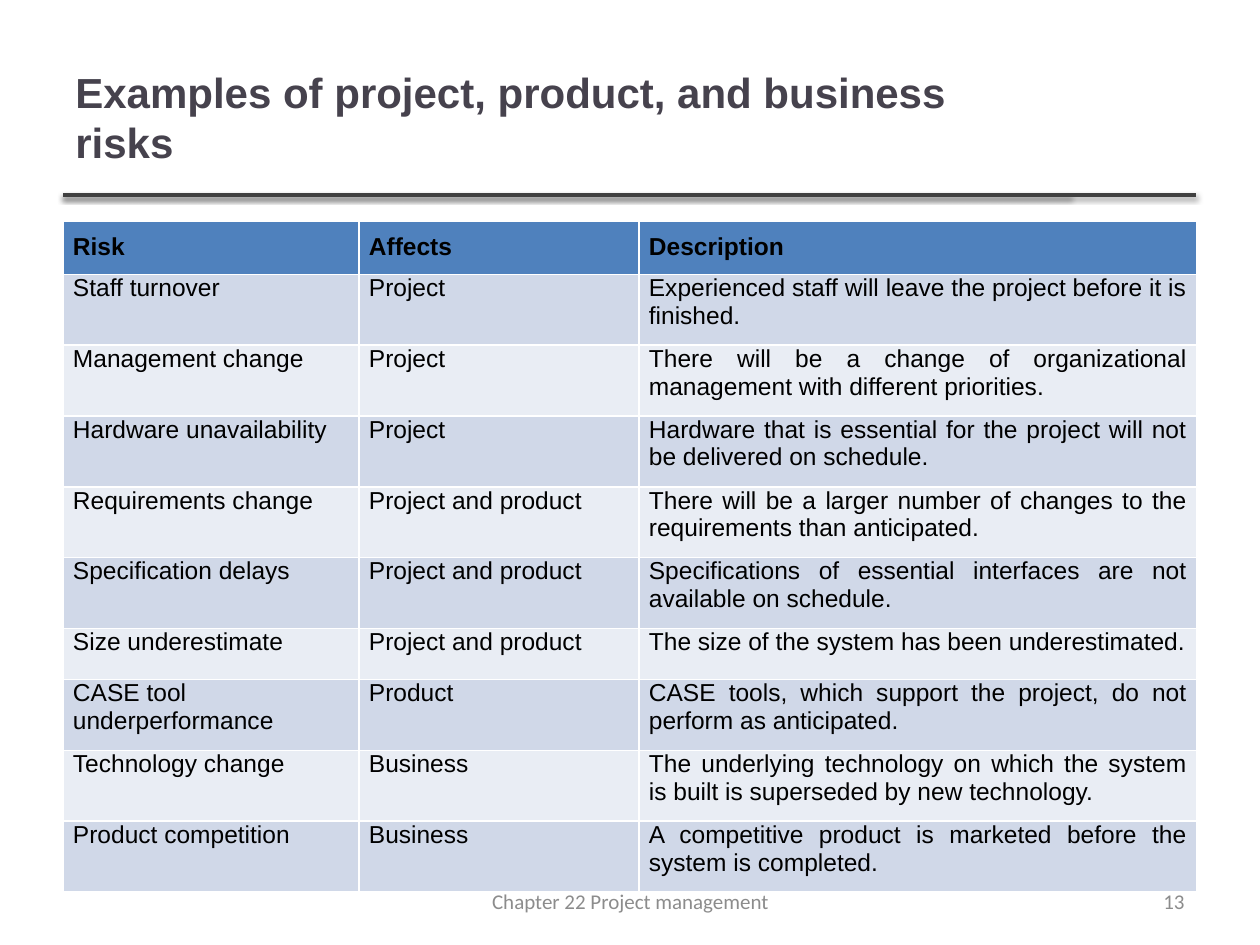
from pptx import Presentation
from pptx.dml.color import RGBColor as RGB
from pptx.enum.shapes import MSO_CONNECTOR as LINK
from pptx.enum.text import MSO_ANCHOR as ANCHOR, PP_ALIGN as ALIGN
from pptx.oxml import parse_xml
from pptx.util import Pt

PX = 914400 / 126
SHADOW = """<a:effectLst xmlns:a="http://schemas.openxmlformats.org/drawingml/2006/main">
<a:outerShdw blurRad="40000" dist="20000" dir="5400000" rotWithShape="0">
<a:srgbClr val="000000"><a:alpha val="38000"/></a:srgbClr>
</a:outerShdw></a:effectLst>"""


def px(*nums):
    """Turn pixel lengths into EMU."""
    return [round(n * PX) for n in nums]


def write(frame, text, align, size, name, color, bold=False):
    para = frame.paragraphs[0]
    para.alignment = align
    run = para.add_run()
    run.text = text
    look = {"size": Pt(size), "name": name, "bold": bold}
    for key, val in look.items():
        setattr(run.font, key, val)
    run.font.color.rgb = RGB.from_string(color)


deck = Presentation()
deck.slide_width, deck.slide_height = px(1260, 945)
slide = deck.slides.add_slide(deck.slide_layouts[6])
shapes = slide.shapes

# Rules under the title
for end in (1070, 1196):
    rule = shapes.add_connector(LINK.STRAIGHT, *px(63, 195, end, 195))
    rule.line.width = Pt(2)
    rule.line.color.rgb = RGB.from_string("404040")
    rule._element.spPr.append(parse_xml(SHADOW))

# Title and footer
texts = [
    ((63, 38, 1002, 157), "Examples of project, product, and business risks",
     ALIGN.LEFT, 24, "Arial", "46424D", True),
    ((431, 876, 399, 50), "Chapter 22 Project management",
     ALIGN.CENTER, 12, "Calibri", "8C8C8C"),
    ((903, 876, 294, 50), "13", ALIGN.RIGHT, 12, "Calibri", "8C8C8C"),
]
for spot, text, *look in texts:
    frame = shapes.add_textbox(*px(*spot)).text_frame
    frame.word_wrap = True
    frame.vertical_anchor = ANCHOR.MIDDLE
    write(frame, text, *look)

# Risk table; its default style draws the white borders
rows = [
    ("Risk", "Affects", "Description"),
    ("Staff turnover", "Project",
     "Experienced staff will leave the project before it is finished."),
    ("Management change", "Project",
     "There will be a change of organizational management with different priorities."),
    ("Hardware unavailability", "Project",
     "Hardware that is essential for the project will not be delivered on schedule."),
    ("Requirements change", "Project and product",
     "There will be a larger number of changes to the requirements than anticipated."),
    ("Specification delays", "Project and product",
     "Specifications of essential interfaces are not available on schedule."),
    ("Size underestimate", "Project and product",
     "The size of the system has been underestimated."),
    ("CASE tool underperformance", "Product",
     "CASE tools, which support the project, do not perform as anticipated."),
    ("Technology change", "Business",
     "The underlying technology on which the system is built is superseded by new technology."),
    ("Product competition", "Business",
     "A competitive product is marketed before the system is completed."),
]
high = 51
spot = px(63, 221, 1134, high * len(rows))
table = shapes.add_table(len(rows), 3, *spot).table
for col, wide in zip(table.columns, px(296, 280, 558)):
    col.width = wide
for r, row in enumerate(rows):
    table.rows[r].height = px(high)[0]
    head = r == 0
    fill = "4F81BD" if head else ("E9EDF4", "D0D8E8")[r % 2]
    for c, text in enumerate(row):
        cell = table.cell(r, c)
        pad = px(10, 12 if head else 0, 10, 12)
        for side, gap in zip(("left", "top", "right", "bottom"), pad):
            setattr(cell, f"margin_{side}", gap)
        cell.vertical_anchor = ANCHOR.TOP
        cell.fill.solid()
        cell.fill.fore_color.rgb = RGB.from_string(fill)
        align = ALIGN.JUSTIFY if head or c == 2 else ALIGN.LEFT
        write(cell.text_frame, text, align, 14, "Arial", "000000", head)

deck.save("out.pptx")
